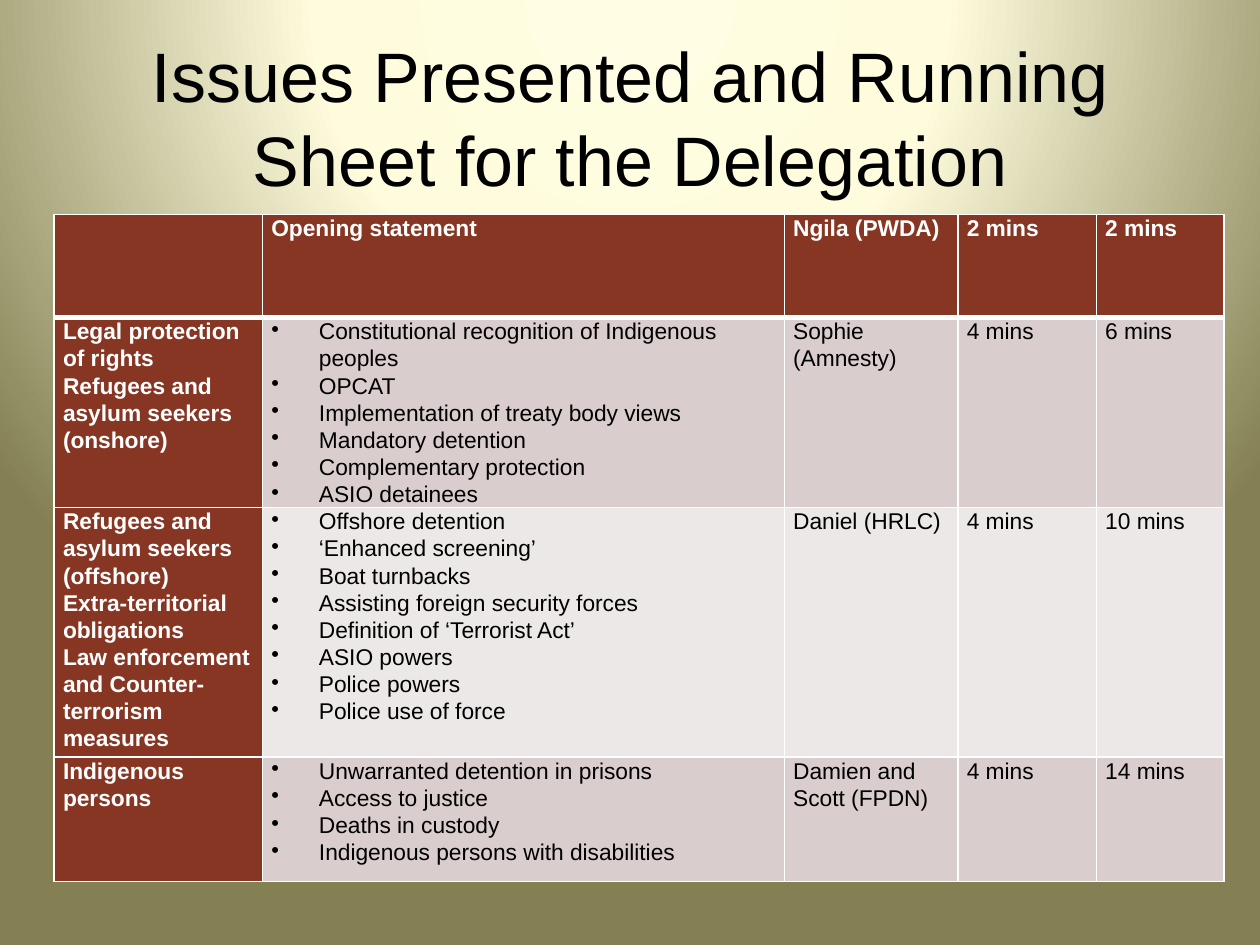
from lxml.etree import SubElement
from pptx import Presentation
from pptx.dml.color import RGBColor
from pptx.enum.text import MSO_ANCHOR, PP_ALIGN
from pptx.oxml import parse_xml
from pptx.oxml.ns import nsdecls, qn
from pptx.util import Cm, Pt

BLACK = RGBColor(0x00, 0x00, 0x00)
WHITE = RGBColor(0xFF, 0xFF, 0xFF)
RUST = RGBColor(0x87, 0x36, 0x24)
BAND_DARK = RGBColor(0xD9, 0xCE, 0xCD)
BAND_LIGHT = RGBColor(0xED, 0xE8, 0xE8)
BACKGROUND_STOPS = [
    (0, RGBColor(0xFF, 0xFD, 0xE3)),
    (40, RGBColor(0xFF, 0xFC, 0xDD)),
    (100, RGBColor(0x84, 0x80, 0x54)),
]

FONT = "Arial"
TITLE = "Issues Presented and Running Sheet for the Delegation"
COLUMN_WIDTHS = [4.2, 10.52, 3.5, 2.79, 2.57]
ROW_HEIGHTS = [2.08, 3.76, 5.03, 2.51]
ISSUES_COLUMN = 1
RUNNING_SHEET = [
    [[], ["Opening statement"], ["Ngila (PWDA)"], ["2 mins"], ["2 mins"]],
    [
        ["Legal protection of rights", "Refugees and asylum seekers (onshore)"],
        [
            "Constitutional recognition of Indigenous peoples",
            "OPCAT",
            "Implementation of treaty body views",
            "Mandatory detention",
            "Complementary protection",
            "ASIO detainees",
        ],
        ["Sophie (Amnesty)"],
        ["4 mins"],
        ["6 mins"],
    ],
    [
        [
            "Refugees and asylum seekers (offshore)",
            "Extra-territorial obligations",
            "Law enforcement and Counter-terrorism measures",
        ],
        [
            "Offshore detention",
            "‘Enhanced screening’",
            "Boat turnbacks",
            "Assisting foreign security forces",
            "Definition of ‘Terrorist Act’",
            "ASIO powers",
            "Police powers",
            "Police use of force",
        ],
        ["Daniel (HRLC)"],
        ["4 mins"],
        ["10 mins"],
    ],
    [
        ["Indigenous persons"],
        [
            "Unwarranted detention in prisons",
            "Access to justice",
            "Deaths in custody",
            "Indigenous persons with disabilities",
        ],
        ["Damien and Scott (FPDN)"],
        ["4 mins"],
        ["14 mins"],
    ],
]


def paint_background(page):
    """Give the page a radial gradient centred above its top edge."""
    stops = "".join(
        f'<a:gs pos="{position * 1000}"><a:srgbClr val="{color}"/></a:gs>'
        for position, color in BACKGROUND_STOPS
    )
    background = parse_xml(
        f'<p:bg {nsdecls("p", "a")}><p:bgPr><a:gradFill rotWithShape="1">'
        f'<a:gsLst>{stops}</a:gsLst><a:path path="circle">'
        '<a:fillToRect l="50000" t="-80000" r="50000" b="180000"/></a:path>'
        "</a:gradFill><a:effectLst/></p:bgPr></p:bg>"
    )
    page.element.cSld.insert(0, background)


def set_title(page):
    """Place and format the title placeholder."""
    title = page.shapes.title
    title.left, title.top, title.width, title.height = Cm(1.27), Cm(0.76), Cm(22.86), Cm(3.18)
    frame = title.text_frame
    frame.text = TITLE
    frame.word_wrap = True
    frame.vertical_anchor = MSO_ANCHOR.MIDDLE
    para = frame.paragraphs[0]
    para.alignment = PP_ALIGN.CENTER
    para.font.name, para.font.size, para.font.color.rgb = FONT, Pt(40), BLACK


def add_bullet(para):
    """Turn a paragraph into a bullet with a hanging indent."""
    properties = para._p.get_or_add_pPr()
    properties.set("marL", str(Cm(0.96)))
    properties.set("indent", str(-Cm(0.96)))
    bullet = SubElement(properties, qn("a:buChar"), char="•")
    defaults = properties.find(qn("a:defRPr"))
    if defaults is not None:
        defaults.addprevious(bullet)


def set_borders(cell, bottom_width):
    """Draw white lines on the four sides of a cell."""
    properties = cell._tc.get_or_add_tcPr()
    widths = {"lnL": 1, "lnR": 1, "lnT": 1, "lnB": bottom_width}
    for index, (side, width) in enumerate(widths.items()):
        properties.insert(index, parse_xml(
            f'<a:{side} {nsdecls("a")} w="{Pt(width)}"><a:solidFill>'
            f'<a:srgbClr val="{WHITE}"/></a:solidFill></a:{side}>'
        ))


def fill_cell(cell, lines, fill, is_heading, is_bulleted):
    """Write the lines of one cell and style it."""
    cell.fill.solid()
    cell.fill.fore_color.rgb = fill
    cell.margin_left = cell.margin_right = Cm(0.18)
    cell.margin_top = cell.margin_bottom = 0
    cell.text = "\n".join(lines)
    for para in cell.text_frame.paragraphs:
        para.line_spacing = 1.07
        font = para.font
        font.name, font.size, font.bold = FONT, Pt(13), is_heading
        font.color.rgb = WHITE if is_heading else BLACK
        if is_bulleted:
            add_bullet(para)


def add_running_sheet(page):
    """Add the table of issues, speakers and times."""
    table = page.shapes.add_table(
        len(ROW_HEIGHTS), len(COLUMN_WIDTHS), Cm(1.09), Cm(4.32),
        Cm(sum(COLUMN_WIDTHS)), Cm(sum(ROW_HEIGHTS)),
    ).table
    for column, width in zip(table.columns, COLUMN_WIDTHS):
        column.width = Cm(width)
    for row, height in zip(table.rows, ROW_HEIGHTS):
        row.height = Cm(height)
    table.first_col = True
    for row_index, row in enumerate(RUNNING_SHEET):
        band = BAND_DARK if row_index % 2 else BAND_LIGHT
        for column_index, lines in enumerate(row):
            cell = table.cell(row_index, column_index)
            is_heading = row_index == 0 or column_index == 0
            is_bulleted = row_index > 0 and column_index == ISSUES_COLUMN
            fill_cell(cell, lines, RUST if is_heading else band, is_heading, is_bulleted)
            set_borders(cell, 3 if row_index == 0 else 1)


def main():
    """Build the deck and save it."""
    deck = Presentation()
    deck.slide_width, deck.slide_height = Cm(25.4), Cm(19.05)
    page = deck.slides.add_slide(deck.slide_layouts[5])
    paint_background(page)
    set_title(page)
    add_running_sheet(page)
    deck.save("out.pptx")


if __name__ == "__main__":
    main()
